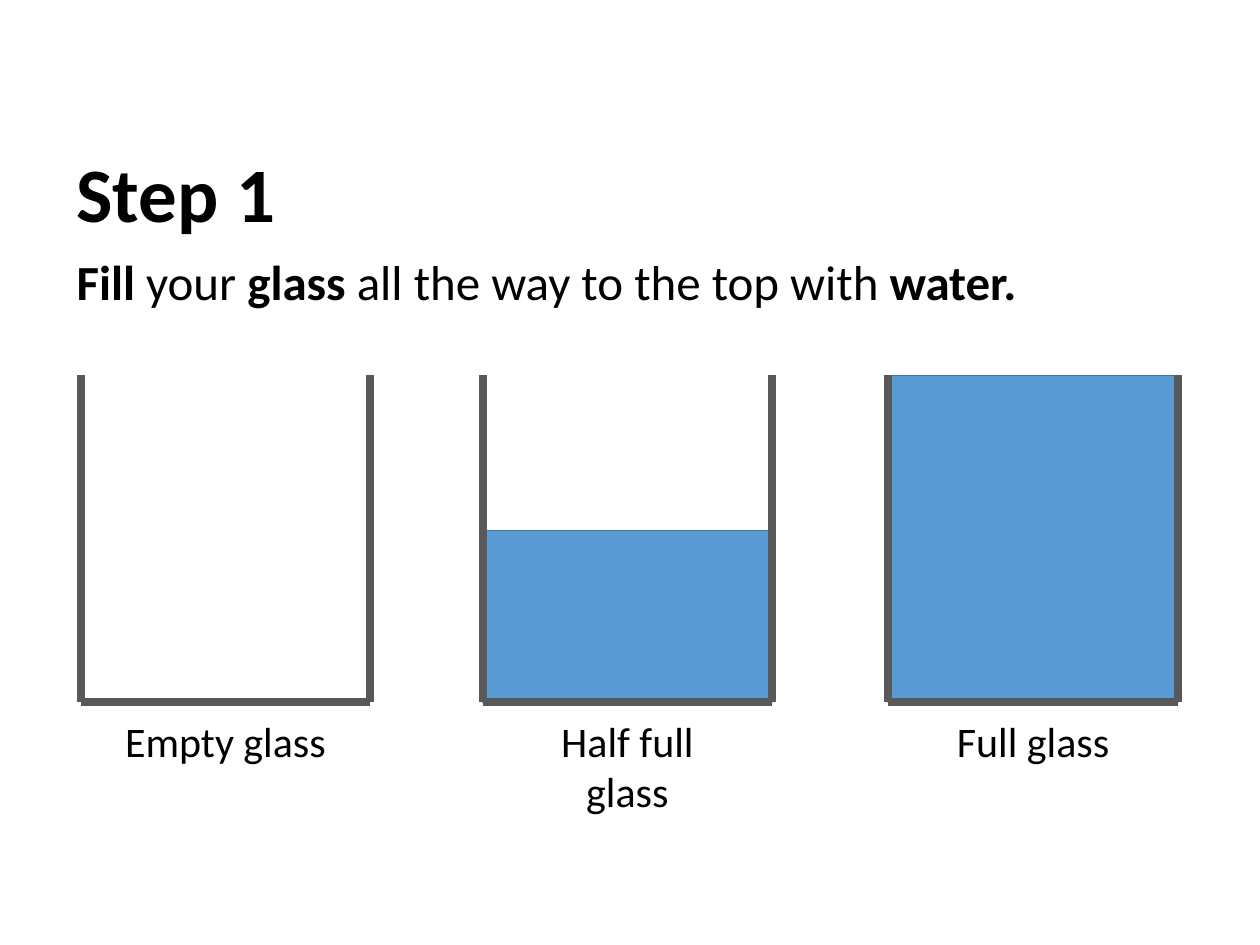
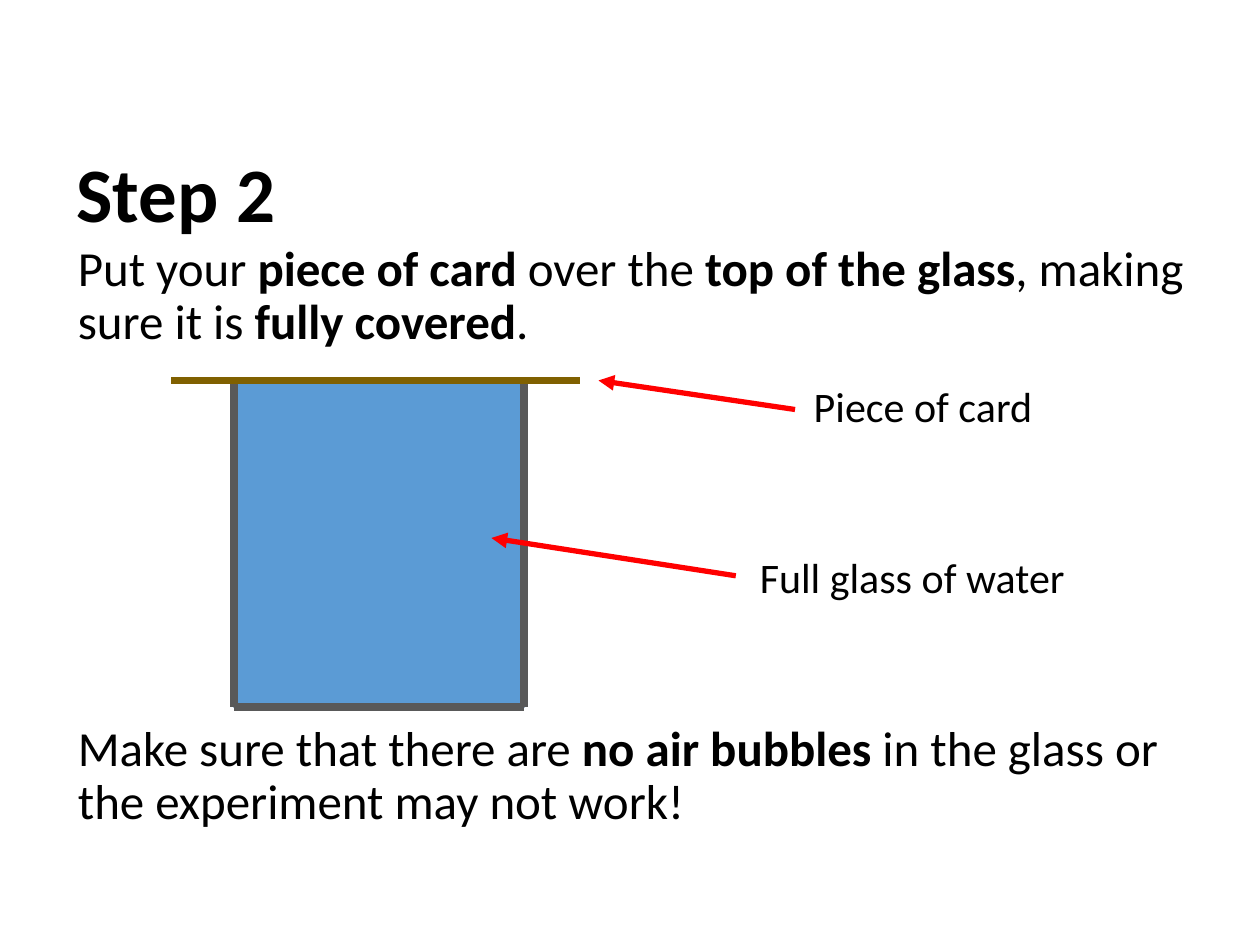
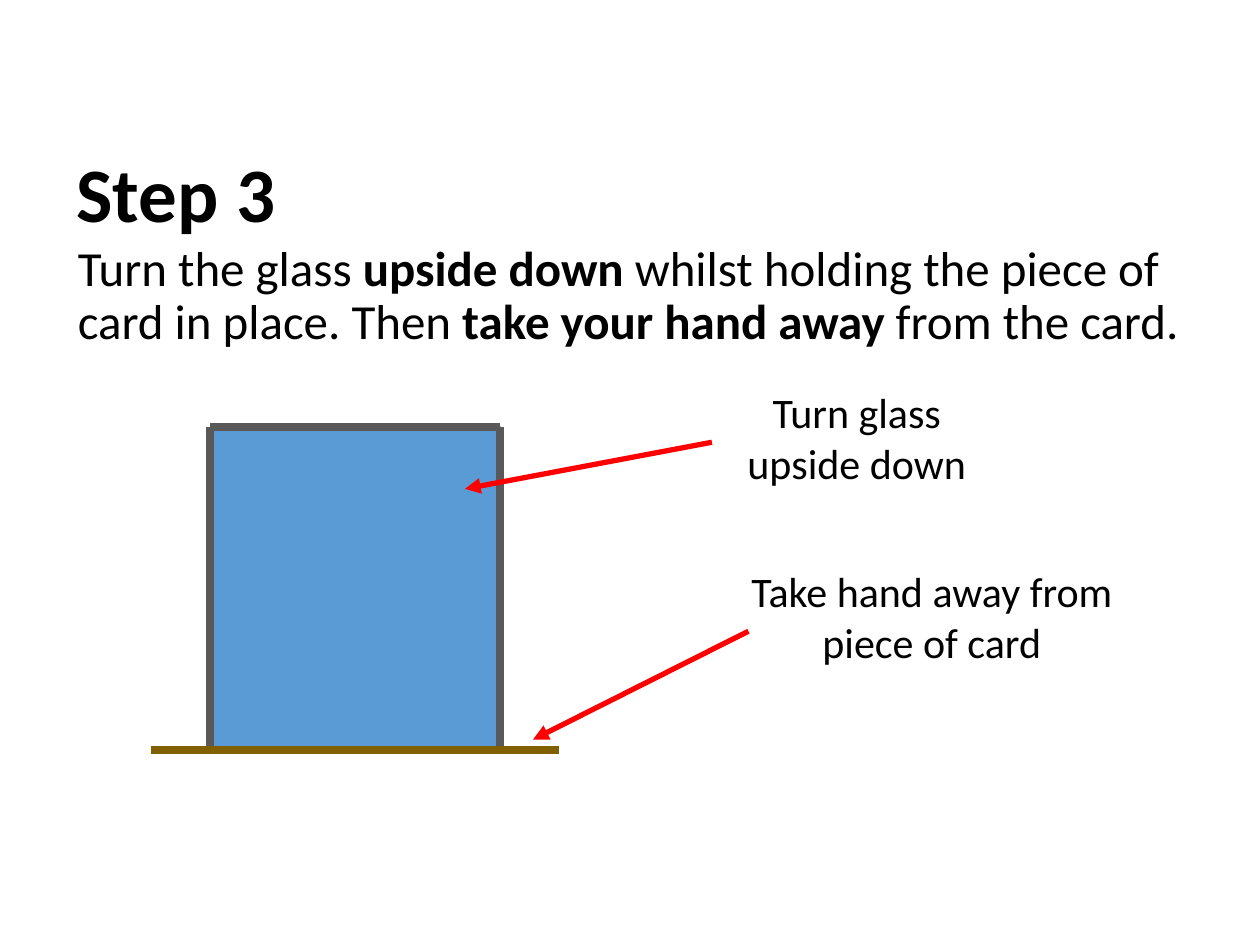
from dataclasses import dataclass

from lxml import etree
from pptx import Presentation
from pptx.dml.color import RGBColor
from pptx.enum.shapes import MSO_CONNECTOR, MSO_SHAPE
from pptx.enum.text import MSO_ANCHOR, PP_ALIGN
from pptx.oxml.ns import qn
from pptx.util import Pt

STRAIGHT = MSO_CONNECTOR.STRAIGHT
RECTANGLE = MSO_SHAPE.RECTANGLE
TOP, MIDDLE = MSO_ANCHOR.TOP, MSO_ANCHOR.MIDDLE
LEFT, CENTER = PP_ALIGN.LEFT, PP_ALIGN.CENTER


@dataclass(frozen=True)
class Theme:
    font: str = "Calibri"
    ink: str = "000000"
    water: str = "5B9BD5"
    water_edge: str = "43739E"
    glass: str = "595959"
    card: str = "806000"
    arrow: str = "FF0000"
    title_size: float = 44
    body_size: float = 28
    label_size: float = 24
    wall_width: float = 4.5
    arrow_width: float = 3
    edge_width: float = 1
    tight: float = 0.9


@dataclass(frozen=True)
class Box:
    left: float
    top: float
    width: float
    height: float

    def inner(self, left, top, width, height):
        return Box(self.left + left, self.top + top, width, height)

    def point(self, across, down):
        return self.left + across, self.top + down

    def lengths(self):
        return [Pt(value) for value in (self.left, self.top, self.width, self.height)]


THEME = Theme()
PAGE_SIZE = (720, 540)
CONTENT = Box(36.72, 84.24, 660, 428)
GLASS_SIZE = (165.6, 186.48)
CARD_WIDTH = 233.28
ONE_LINE, TWO_LINES = 36, 65.5


def set_values(target, values):
    for name, value in values.items():
        setattr(target, name, value)


def add_text(page, box, text, size, align=LEFT, anchor=TOP, spacing=1.0):
    frame = page.shapes.add_textbox(*box.lengths()).text_frame
    set_values(frame, {"word_wrap": True, "vertical_anchor": anchor})
    para = frame.paragraphs[0]
    set_values(para, {"alignment": align, "line_spacing": spacing})
    for index, words in enumerate(text.split("*")):
        if words:
            span = para.add_run()
            span.text = words
            set_values(span.font, {"name": THEME.font, "size": Pt(size), "bold": index % 2 == 1})
            span.font.color.rgb = RGBColor.from_string(THEME.ink)


def add_body(page, box, text):
    add_text(page, box, text, THEME.body_size, spacing=THEME.tight)


def add_label(page, box, text, align=CENTER):
    add_text(page, box, text, THEME.label_size, align)


def add_line(page, start, end, color, width):
    line = page.shapes.add_connector(STRAIGHT, *[Pt(value) for value in (*start, *end)])
    line.line.color.rgb = RGBColor.from_string(color)
    line.line.width = Pt(width)
    etree.SubElement(line._element.spPr, qn("a:effectLst"))
    return line


def add_arrow(page, start, end):
    arrow = add_line(page, start, end, THEME.arrow, THEME.arrow_width)
    outline = arrow._element.spPr.find(qn("a:ln"))
    etree.SubElement(outline, qn("a:tailEnd"), type="triangle")


def add_water(page, box):
    water = page.shapes.add_shape(RECTANGLE, *box.lengths())
    water.shadow.inherit = False
    water.fill.solid()
    water.fill.fore_color.rgb = RGBColor.from_string(THEME.water)
    water.line.color.rgb = RGBColor.from_string(THEME.water_edge)
    water.line.width = Pt(THEME.edge_width)


def add_glass(page, box, level=1.0, upside_down=False):
    if level:
        depth = box.height * level
        add_water(page, box.inner(0, box.height - depth, box.width, depth))
    base, rim = (0, box.height) if upside_down else (box.height, 0)
    corners = [(0, base), (box.width, base)]
    strokes = [corners] + [[(across, base), (across, rim)] for across in (0, box.width)]
    for start, end in strokes:
        add_line(page, box.point(*start), box.point(*end), THEME.glass, THEME.wall_width)


def add_card(page, box, across, down):
    add_line(page, box.point(across, down), box.point(across + CARD_WIDTH, down),
             THEME.card, THEME.wall_width)


def add_callouts(page, glass, callouts):
    for text, align, label, start, end in callouts:
        add_label(page, glass.inner(*label), text, align)
        add_arrow(page, glass.point(*start), glass.point(*end))


def add_step(deck, area, number):
    page = deck.slides.add_slide(deck.slide_layouts[6])
    add_text(page, area.inner(0, 0, 620.64, 56.88), f"*Step {number}*",
             THEME.title_size, anchor=MIDDLE, spacing=THEME.tight)
    return page


def add_fill_step(deck, area):
    page = add_step(deck, area, 1)
    add_body(page, area.inner(0, 59.76, 573.12, 56.88),
             "*Fill* your *glass *all the way to the top with *water.*")
    glasses = [
        ("Empty glass", 9.36, 0, ONE_LINE),
        ("Half full glass", 239.04, 0.525, TWO_LINES),
        ("Full glass", 470.88, 1, ONE_LINE),
    ]
    for text, left, level, height in glasses:
        glass = area.inner(left, 130.32, *GLASS_SIZE)
        add_glass(page, glass, level)
        add_label(page, glass.inner(18, 190.8, 129.6, height), text)


def add_cover_step(deck, area):
    page = add_step(deck, area, 2)
    add_body(page, area.inner(0.72, 51.84, 659.52, 72.72),
             "Put your *piece of card *over the *top of the glass*, "
             "making sure it is *fully covered*.")
    add_body(page, area.inner(0.72, 326.16, 660.24, 101.52),
             "Make sure that there are *no air bubbles *in the glass "
             "or the experiment may not work!")
    glass = area.inner(97.2, 133.2, *GLASS_SIZE)
    add_glass(page, glass)
    add_card(page, glass, -36, 0)
    add_callouts(page, glass, [
        ("Piece of card", LEFT, (324, -3.6, 181.44, ONE_LINE), (320.4, 16.56), (208.08, 0)),
        ("Full glass of water", CENTER, (276.48, 94.32, 221.76, ONE_LINE),
         (286.56, 111.6), (146.88, 90)),
    ])


def add_turn_step(deck, area):
    page = add_step(deck, area, 3)
    add_body(page, area.inner(0.72, 51.84, 659.52, 72.72),
             "Turn the glass *upside down *whilst holding the piece of card in place. "
             "Then *take your hand away *from the card.")
    glass = area.inner(83.52, 159.84, *GLASS_SIZE)
    add_glass(page, glass, upside_down=True)
    add_card(page, glass, -33.84, 184.32)
    add_callouts(page, glass, [
        ("Turn glass upside down", CENTER, (286.56, -26.64, 165.6, TWO_LINES),
         (286.56, 8.64), (145.44, 35.28)),
        ("Take hand away from piece of card", CENTER, (298.8, 75.6, 226.8, TWO_LINES),
         (307.44, 116.64), (184.32, 178.56)),
    ])


def main():
    deck = Presentation()
    deck.slide_width, deck.slide_height = [Pt(value) for value in PAGE_SIZE]
    for add_page in (add_fill_step, add_cover_step, add_turn_step):
        add_page(deck, CONTENT)
    deck.save("out.pptx")


if __name__ == "__main__":
    main()
